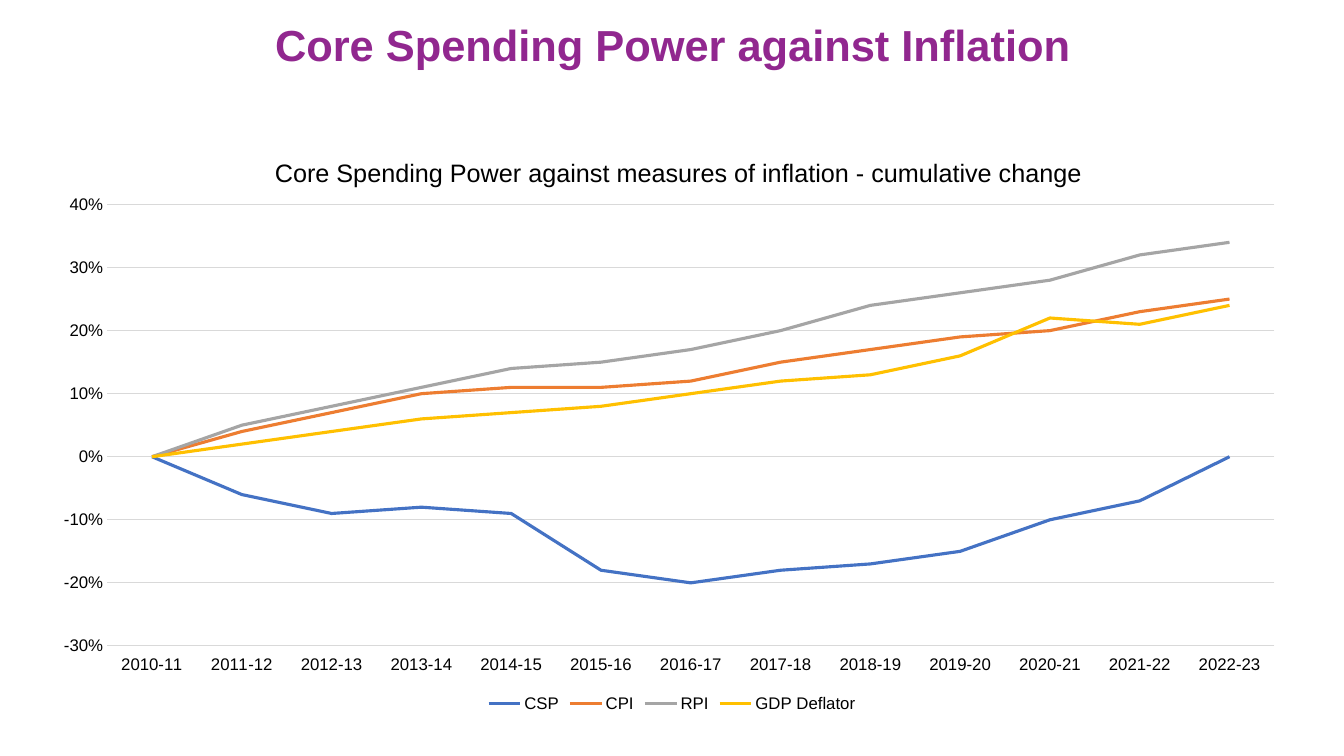
from lxml.etree import SubElement
from pptx import Presentation
from pptx.chart.data import CategoryChartData
from pptx.dml.color import RGBColor
from pptx.enum.chart import XL_CHART_TYPE, XL_LEGEND_POSITION, XL_TICK_LABEL_POSITION, XL_TICK_MARK
from pptx.enum.text import MSO_ANCHOR, PP_ALIGN
from pptx.oxml.ns import qn
from pptx.util import Inches, Pt

FONT = "Arial"
COLORS = {
    "heading": "91278F",
    "text": "000000",
    "grid": "D9D9D9",
    "CSP": "4472C4",
    "CPI": "ED7D31",
    "RPI": "A5A5A5",
    "GDP Deflator": "FFC000",
}
HEADING = "Core Spending Power against Inflation"
CHART_TITLE = "Core Spending Power against measures of inflation - cumulative change"
YEARS = [f"{year}-{year % 100 + 1}" for year in range(2010, 2023)]
SERIES = {
    "CSP": [0, -0.06, -0.09, -0.08, -0.09, -0.18, -0.2, -0.18, -0.17, -0.15, -0.1, -0.07, 0],
    "CPI": [0, 0.04, 0.07, 0.1, 0.11, 0.11, 0.12, 0.15, 0.17, 0.19, 0.2, 0.23, 0.25],
    "RPI": [0, 0.05, 0.08, 0.11, 0.14, 0.15, 0.17, 0.2, 0.24, 0.26, 0.28, 0.32, 0.34],
    "GDP Deflator": [0, 0.02, 0.04, 0.06, 0.07, 0.08, 0.1, 0.12, 0.13, 0.16, 0.22, 0.21, 0.24],
}
TITLE_POSITION = {"xMode": "edge", "yMode": "edge", "x": 0.18, "y": 0.04}
PLOT_POSITION = {"layoutTarget": "inner", "xMode": "edge", "yMode": "edge",
                 "x": 0.05, "y": 0.13, "w": 0.93, "h": 0.75}


def color(name):
    return RGBColor.from_string(COLORS[name])


def style_font(font, size, color_name="text", bold=False):
    font.name = FONT
    font.size = Pt(size)
    font.bold = bold
    font.color.rgb = color(color_name)


def style_line(line, color_name, width):
    line.color.rgb = color(color_name)
    line.width = Pt(width)


def set_layout(element, index, position):
    """Place a chart part by fractions of the chart's size."""
    layout = element.find(qn("c:layout"))
    if layout is None:
        layout = SubElement(element, qn("c:layout"))
        element.insert(index, layout)
    manual = SubElement(layout, qn("c:manualLayout"))
    for tag, value in position.items():
        SubElement(manual, qn(f"c:{tag}")).set("val", str(value))


def add_heading(slide):
    heading = slide.shapes.title
    heading.left, heading.top = Inches(2.36), Inches(0)
    heading.width, heading.height = Inches(8.62), Inches(0.87)
    frame = heading.text_frame
    frame.text = HEADING
    frame.word_wrap = True
    frame.vertical_anchor = MSO_ANCHOR.MIDDLE
    paragraph = frame.paragraphs[0]
    paragraph.alignment = PP_ALIGN.CENTER
    paragraph.space_after = Pt(6)
    style_font(paragraph.font, 31, "heading", bold=True)


def add_inflation_chart(slide):
    data = CategoryChartData(number_format="0%")
    data.categories = YEARS
    for name, values in SERIES.items():
        data.add_series(name, values)
    chart = slide.shapes.add_chart(
        XL_CHART_TYPE.LINE, Inches(0.44), Inches(1.27), Inches(12.45), Inches(5.84), data
    ).chart
    style_font(chart.font, 12)

    chart.has_title = True
    title_frame = chart.chart_title.text_frame
    title_frame.text = CHART_TITLE
    style_font(title_frame.paragraphs[0].font, 18)
    chart.chart_title.include_in_layout = False
    set_layout(title_frame._txBody.getparent().getparent(), 1, TITLE_POSITION)

    chart.has_legend = True
    chart.legend.position = XL_LEGEND_POSITION.BOTTOM
    chart.legend.include_in_layout = False
    style_font(chart.legend.font, 12)

    for axis in (chart.category_axis, chart.value_axis):
        axis.major_tick_mark = axis.minor_tick_mark = XL_TICK_MARK.NONE
        style_font(axis.tick_labels.font, 12)
    chart.category_axis.tick_label_position = XL_TICK_LABEL_POSITION.LOW
    style_line(chart.category_axis.format.line, "grid", 0.75)

    value_axis = chart.value_axis
    value_axis.minimum_scale, value_axis.maximum_scale = -0.3, 0.4
    value_axis.major_unit = 0.1
    value_axis.tick_labels.number_format = "0%"
    value_axis.tick_labels.number_format_is_linked = False
    value_axis.format.line.fill.background()
    style_line(value_axis.major_gridlines.format.line, "grid", 0.75)

    plot = chart.plots[0]
    plot.vary_by_categories = False
    for series in plot.series:
        series.smooth = False
        style_line(series.format.line, series.name, 2.25)
    set_layout(plot._element.getparent(), 0, PLOT_POSITION)


def main():
    presentation = Presentation()
    presentation.slide_width, presentation.slide_height = Inches(13.33), Inches(7.5)
    slide = presentation.slides.add_slide(presentation.slide_layouts[5])
    add_heading(slide)
    add_inflation_chart(slide)
    presentation.save("out.pptx")


if __name__ == "__main__":
    main()
